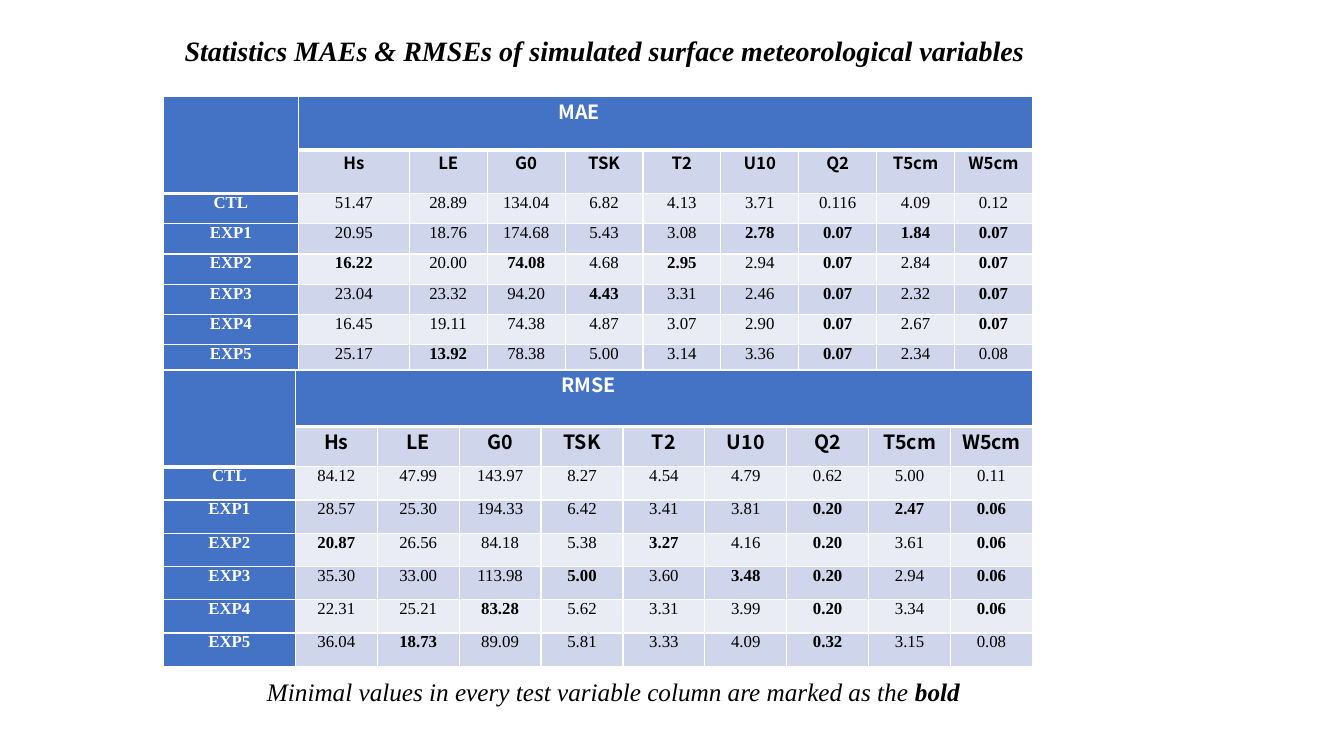
from lxml import etree
from pptx import Presentation
from pptx.dml.color import RGBColor
from pptx.enum.text import MSO_ANCHOR, MSO_AUTO_SIZE, PP_ALIGN
from pptx.oxml.ns import qn
from pptx.util import Inches, Pt

LEFT, CENTER = PP_ALIGN.LEFT, PP_ALIGN.CENTER
MIDDLE, NO_AUTOFIT = MSO_ANCHOR.MIDDLE, MSO_AUTO_SIZE.NONE
BLUE = RGBColor(0x44, 0x72, 0xC4)
LIGHT_BAND = RGBColor(0xE9, 0xEB, 0xF5)
DARK_BAND = RGBColor(0xCF, 0xD5, 0xEA)
WHITE = RGBColor(0xFF, 0xFF, 0xFF)
BLACK = RGBColor(0, 0, 0)
SERIF, SANS = "Times New Roman", "Noto Sans CJK SC"

VARIABLES = ["Hs", "LE", "G0", "TSK", "T2", "U10", "Q2", "T5cm", "W5cm"]

# A trailing asterisk marks a value set in bold.
MAE_VALUES = """
CTL 51.47 28.89 134.04 6.82 4.13 3.71 0.116 4.09 0.12
EXP1 20.95 18.76 174.68 5.43 3.08 2.78* 0.07* 1.84* 0.07*
EXP2 16.22* 20.00 74.08* 4.68 2.95* 2.94 0.07* 2.84 0.07*
EXP3 23.04 23.32 94.20 4.43* 3.31 2.46 0.07* 2.32 0.07*
EXP4 16.45 19.11 74.38 4.87 3.07 2.90 0.07* 2.67 0.07*
EXP5 25.17 13.92* 78.38 5.00 3.14 3.36 0.07* 2.34 0.08
"""
RMSE_VALUES = """
CTL 84.12 47.99 143.97 8.27 4.54 4.79 0.62 5.00 0.11
EXP1 28.57 25.30 194.33 6.42 3.41 3.81 0.20* 2.47* 0.06*
EXP2 20.87* 26.56 84.18 5.38 3.27* 4.16 0.20* 3.61 0.06*
EXP3 35.30 33.00 113.98 5.00* 3.60 3.48* 0.20* 2.94 0.06*
EXP4 22.31 25.21 83.28* 5.62 3.31 3.99 0.20* 3.34 0.06*
EXP5 36.04 18.73* 89.09 5.81 3.33 4.09 0.32* 3.15 0.08
"""

# heading, top, column widths, row heights, heading indent, variable size, values
STATISTICS = [
    ("MAE", 0.96, [1.34, 1.1] + [0.7725] * 8, [0.53, 0.43] + [0.3] * 6,
     2.58, 12, MAE_VALUES),
    ("RMSE", 3.67, [1.31] + [0.8125] * 9, [0.56, 0.4] + [0.33] * 6,
     2.64, 14, RMSE_VALUES),
]


def style_cell(cell, fill, top_width=1, bottom_width=1):
    """Give a cell its fill, margins and white borders (widths in points)."""
    properties = cell._tc.get_or_add_tcPr()
    for side, width in zip("LRTB", (1, 1, top_width, bottom_width)):
        line = etree.SubElement(properties, qn(f"a:ln{side}"), w=str(Pt(width)))
        solid = etree.SubElement(line, qn("a:solidFill"))
        etree.SubElement(solid, qn("a:srgbClr"), val=str(WHITE))
    cell.fill.solid()
    cell.fill.fore_color.rgb = fill
    cell.margin_left = cell.margin_right = Inches(0.07)
    cell.margin_top = cell.margin_bottom = 0


def write(paragraph, text, font, size, color, bold, align):
    paragraph.text = text
    paragraph.alignment = align
    paragraph.font.name = font
    paragraph.font.size = Pt(size)
    paragraph.font.color.rgb = color
    paragraph.font.bold = bold


prs = Presentation()
prs.slide_width, prs.slide_height = Inches(13.33), Inches(7.5)
slide = prs.slides.add_slide(prs.slide_layouts[5])

for heading, top, widths, heights, indent, variable_size, values in STATISTICS:
    experiments = [line.split() for line in values.strip().splitlines()]
    table = slide.shapes.add_table(
        len(heights), len(widths), Inches(1.62), Inches(top),
        Inches(sum(widths)), Inches(sum(heights))).table
    for column, width in zip(table.columns, widths):
        column.width = Inches(width)
    for row, height in zip(table.rows, heights):
        row.height = Inches(height)

    for col in range(len(widths)):
        style_cell(table.cell(0, col), BLUE, bottom_width=3)
    table.cell(0, 0).merge(table.cell(1, 0))
    table.cell(0, 1).merge(table.cell(0, len(widths) - 1))
    style_cell(table.cell(1, 0), BLUE, bottom_width=3)
    heading_cell = table.cell(0, 1)
    heading_cell.margin_left = Inches(indent)
    write(heading_cell.text_frame.paragraphs[0], heading,
          SANS, 14, WHITE, True, LEFT)

    for col, variable in enumerate(VARIABLES, 1):
        cell = table.cell(1, col)
        style_cell(cell, DARK_BAND, top_width=3)
        write(cell.text_frame.paragraphs[0], variable,
              SANS, variable_size, BLACK, True, CENTER)

    for row, experiment in enumerate(experiments, 2):
        band = DARK_BAND if row % 2 else LIGHT_BAND
        for col, entry in enumerate(experiment):
            is_label = col == 0
            cell = table.cell(row, col)
            style_cell(cell, BLUE if is_label else band,
                       top_width=3 if is_label and row == 2 else 1)
            write(cell.text_frame.paragraphs[0], entry.rstrip("*"), SERIF, 12,
                  WHITE if is_label else BLACK,
                  is_label or entry.endswith("*"), CENTER)

title = slide.shapes.title
title.left, title.top = Inches(1.73), Inches(0.28)
title.width, title.height = Inches(9.87), Inches(0.44)
title.text_frame.auto_size = NO_AUTOFIT
title.text_frame.vertical_anchor = MIDDLE
title_line = title.text_frame.paragraphs[0]
write(title_line, "Statistics MAEs & RMSEs of simulated surface meteorological variables",
      SERIF, 20, BLACK, True, LEFT)
title_line.font.italic = True

footnote = slide.shapes.add_textbox(
    Inches(2.55), Inches(6.66), Inches(8.86), Inches(0.4))
footnote.text_frame.word_wrap = True
footnote_line = footnote.text_frame.paragraphs[0]
write(footnote_line, "Minimal values in every test variable column are marked as the ",
      SERIF, 18, BLACK, False, LEFT)
footnote_line.font.italic = True
bold_word = footnote_line.add_run()
bold_word.text = "bold"
bold_word.font.bold = True

prs.save("out.pptx")
